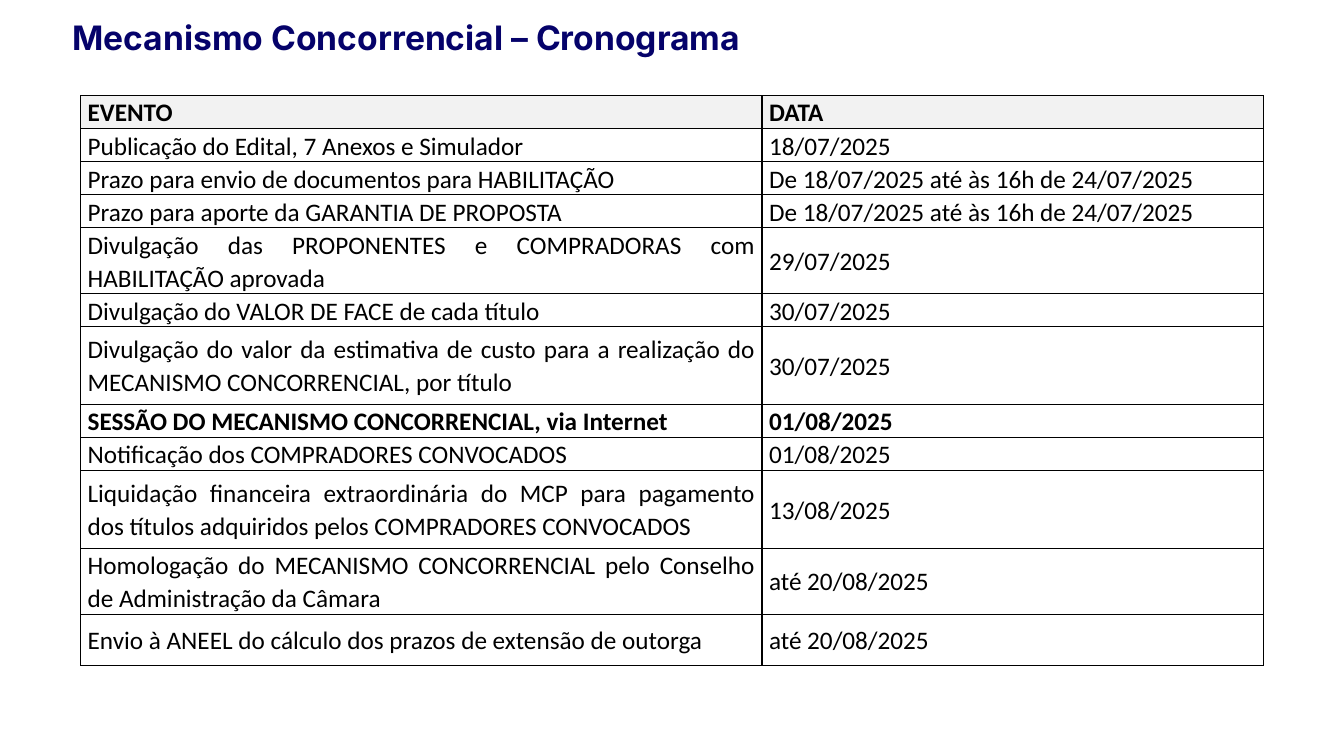
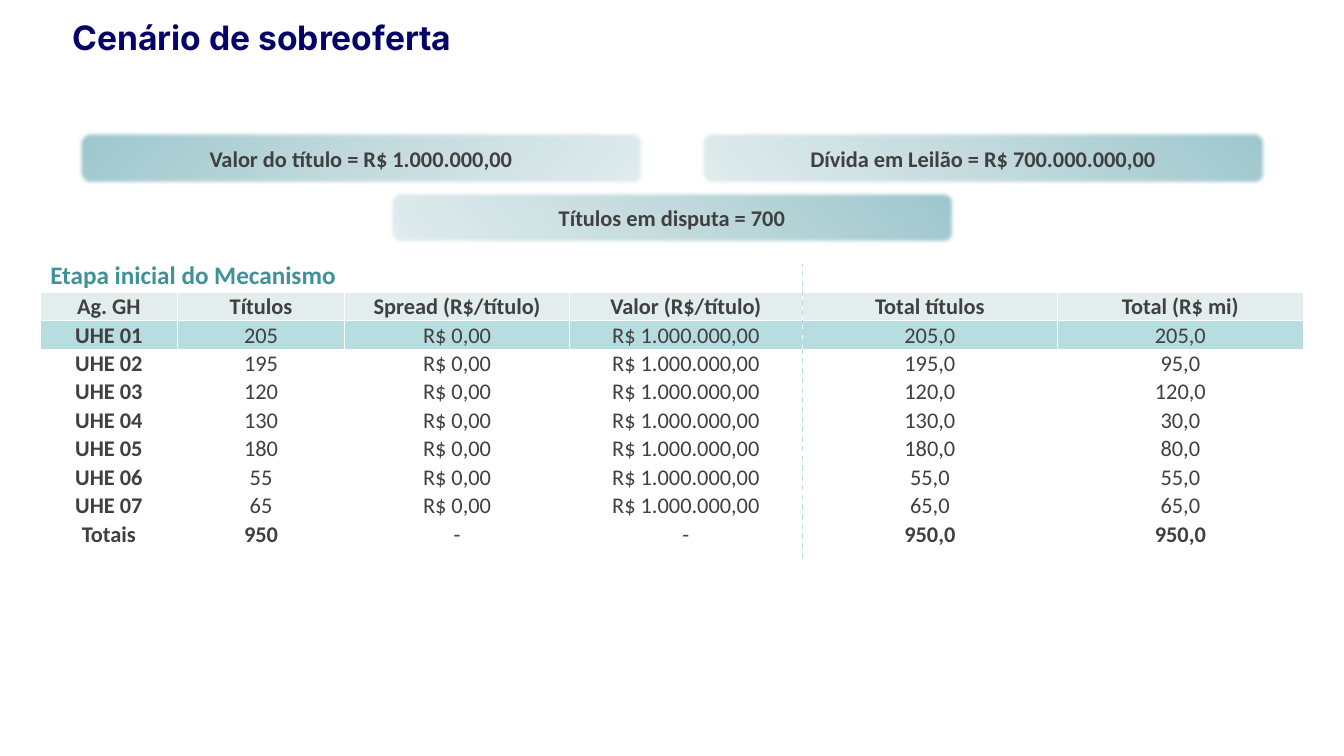
from lxml import etree
from pptx import Presentation, util as u
from pptx.dml.color import RGBColor
from pptx.enum import dml, shapes, text
from pptx.oxml import parse_xml
from pptx.oxml.ns import nsdecls, qn

NAVY = RGBColor(0x05, 0x02, 0x6A)
BLACK = RGBColor(0, 0, 0)
WHITE = RGBColor(0xFF, 0xFF, 0xFF)
GREY = RGBColor(0x40, 0x40, 0x40)
PALE_GREY = RGBColor(0xF2, 0xF2, 0xF2)
TEAL = RGBColor(0x41, 0x91, 0x99)
AQUA = RGBColor(0xB8, 0xDD, 0xE1)
PALE_AQUA = RGBColor(0xE3, 0xED, 0xED)
GRADIENT = [(0, RGBColor(0x9C, 0xC7, 0xCD)), (50, RGBColor(0xC3, 0xDB, 0xDE)),
            (100, RGBColor(0xE2, 0xED, 0xEE))]

CENTER, JUSTIFY = text.PP_ALIGN.CENTER, text.PP_ALIGN.JUSTIFY
TOP, MIDDLE = text.MSO_ANCHOR.TOP, text.MSO_ANCHOR.MIDDLE

SCHEDULE = [
    ("EVENTO", "DATA"),
    ("Publicação do Edital, 7 Anexos e Simulador", "18/07/2025"),
    ("Prazo para envio de documentos para HABILITAÇÃO",
     "De 18/07/2025 até às 16h de 24/07/2025"),
    ("Prazo para aporte da GARANTIA DE PROPOSTA",
     "De 18/07/2025 até às 16h de 24/07/2025"),
    ("Divulgação das PROPONENTES e COMPRADORAS com HABILITAÇÃO aprovada",
     "29/07/2025"),
    ("Divulgação do VALOR DE FACE de cada título", "30/07/2025"),
    ("Divulgação do valor da estimativa de custo para a realização do "
     "MECANISMO CONCORRENCIAL, por título", "30/07/2025"),
    ("SESSÃO DO MECANISMO CONCORRENCIAL, via Internet", "01/08/2025"),
    ("Notificação dos COMPRADORES CONVOCADOS", "01/08/2025"),
    ("Liquidação financeira extraordinária do MCP para pagamento dos títulos "
     "adquiridos pelos COMPRADORES CONVOCADOS", "13/08/2025"),
    ("Homologação do MECANISMO CONCORRENCIAL pelo Conselho de Administração "
     "da Câmara", "até 20/08/2025"),
    ("Envio à ANEEL do cálculo dos prazos de extensão de outorga",
     "até 20/08/2025"),
]
SESSION_ROW = 7

OFFERS = [(205, "205,0"), (195, "95,0"), (120, "120,0"), (130, "30,0"),
          (180, "80,0"), (55, "55,0"), (65, "65,0")]


class Deck:
    """Holds the style and current slide; lengths are percentages of the slide."""

    def __init__(self):
        self.prs = Presentation()
        self.prs.slide_width, self.prs.slide_height = u.Inches(13.33), u.Inches(7.5)
        self.slide = None

    def x(self, share):
        return u.Emu(round(self.prs.slide_width * share / 100))

    def y(self, share):
        return u.Emu(round(self.prs.slide_height * share / 100))

    def box(self, left, top, width, height):
        return self.x(left), self.y(top), self.x(width), self.y(height)

    def add_text(self, tf, words, size, color, bold=True, font="Calibri", align=None):
        p = tf.paragraphs[0]
        p.alignment = align
        r = p.add_run()
        r.text = words
        r.font.name, r.font.size, r.font.bold = font, u.Pt(size), bold
        r.font.color.rgb = color
        return p

    def new_slide(self, title):
        self.slide = self.prs.slides.add_slide(self.prs.slide_layouts[5])
        sp = self.slide.shapes.title
        sp.left, sp.top, sp.width, sp.height = self.box(5.1, 0.67, 83.33, 9.2)
        tf = sp.text_frame
        tf.word_wrap, tf.vertical_anchor = True, MIDDLE
        tf.margin_left = tf.margin_right = u.Inches(0.04)
        tf.margin_top = tf.margin_bottom = u.Inches(0.04)
        p = self.add_text(tf, title, 24, NAVY, font="Inter", align=text.PP_ALIGN.LEFT)
        p.line_spacing = 0.9

    def table(self, left, top, widths, heights):
        frame = self.slide.shapes.add_table(
            len(heights), len(widths),
            *self.box(left, top, sum(widths), sum(heights)))
        table = frame.table
        table.horz_banding = False
        for column, width in zip(table.columns, widths):
            column.width = self.x(width)
        for row, height in zip(table.rows, heights):
            row.height = self.y(height)
        return table

    def cell(self, cell, words, size, color, bold, align, fill, border, margins,
             anchor=MIDDLE):
        (cell.margin_left, cell.margin_top, cell.margin_right,
         cell.margin_bottom) = [u.Inches(m) for m in margins]
        cell.vertical_anchor = anchor
        if fill is None:
            cell.fill.background()
        else:
            cell.fill.solid()
            cell.fill.fore_color.rgb = fill
        tc_pr = cell._tc.get_or_add_tcPr()
        for i, side in enumerate("LRTB"):
            tc_pr.insert(i, parse_xml(
                f'<a:ln{side} {nsdecls("a")} w="12700"><a:solidFill>'
                f'<a:srgbClr val="{border}"/></a:solidFill></a:ln{side}>'))
        return self.add_text(cell.text_frame, words, size, color, bold, align=align)

    def gradient_box(self, left, top, width, height, words, angle):
        sp = self.slide.shapes.add_shape(
            shapes.MSO_SHAPE.ROUNDED_RECTANGLE, *self.box(left, top, width, height))
        sp.line.fill.background()
        stops = "".join(f'<a:gs pos="{pos * 1000}"><a:srgbClr val="{color}"/></a:gs>'
                        for pos, color in GRADIENT)
        sp_pr = sp._element.spPr
        sp_pr.find(qn("a:prstGeom")).addnext(parse_xml(
            f'<a:gradFill {nsdecls("a")} rotWithShape="1"><a:gsLst>{stops}</a:gsLst>'
            f'<a:lin ang="{angle * 60000}" scaled="1"/></a:gradFill>'))
        sp_pr.append(parse_xml(f'<a:effectLst {nsdecls("a")}>'
                               '<a:softEdge rad="31750"/></a:effectLst>'))
        sp.text_frame.word_wrap = True
        sp.text_frame.vertical_anchor = MIDDLE
        self.add_text(sp.text_frame, words, 16, GREY, align=CENTER)

    def heading(self, left, top, width, height, words):
        sp = self.slide.shapes.add_textbox(*self.box(left, top, width, height))
        sp.text_frame.word_wrap = True
        self.add_text(sp.text_frame, words, 18, TEAL)

    def dashed_line(self, x, top, bottom):
        line = self.slide.shapes.add_connector(
            shapes.MSO_CONNECTOR.STRAIGHT,
            self.x(x), self.y(bottom), self.x(x), self.y(top))
        line.line.color.rgb, line.line.width = AQUA, u.Pt(1)
        line.line.dash_style = dml.MSO_LINE.DASH
        etree.SubElement(line._element.spPr, qn("a:effectLst"))


def schedule_slide(deck):
    deck.new_slide("Mecanismo Concorrencial – Cronograma")
    single, double, tall, last = 4.37, 8.73, 10.27, 6.8
    heights = [single] * 4 + [double, single, tall, single, single, tall, double, last]
    table = deck.table(6, 12.67, [50.7, 37.3], heights)
    for i, row in enumerate(SCHEDULE):
        header = i == 0
        for j, words in enumerate(row):
            p = deck.cell(table.cell(i, j), words, 18, BLACK,
                          header or i == SESSION_ROW, JUSTIFY,
                          PALE_GREY if header else None, BLACK,
                          (0.07, 0, 0.07, 0), TOP if header else MIDDLE)
            p.line_spacing, p.space_after = 1.07, u.Pt(8)


def oversupply_slide(deck):
    deck.new_slide("Cenário de sobreoferta")
    rows = [("Ag. GH", "Títulos", "Spread (R$/título)", "Valor (R$/título)",
             "Total títulos", "Total (R$ mi)")]
    rows += [(f"UHE {n:02}", f"{bonds}", "R$ 0,00", "R$ 1.000.000,00",
              f"{bonds},0", total)
             for n, (bonds, total) in enumerate(OFFERS, 1)]
    rows.append(("Totais", "950", "-", "-", "950,0", "950,0"))

    left, widths = 3, [10.2, 12.45, 16.72, 17.33, 18.98, 18.3]
    table = deck.table(left, 38.67, widths, [3.75] * len(rows))
    fills = {0: PALE_AQUA, 1: AQUA}
    for i, row in enumerate(rows):
        for j, words in enumerate(row):
            bold = j == 0 or i == 0 or (i == len(rows) - 1 and words != "-")
            deck.cell(table.cell(i, j), words, 16, GREY, bold, CENTER,
                      fills.get(i), WHITE, (0.01, 0.01, 0.01, 0))

    margin, width, height, top = 5.86, 42, 6.93, 17.47
    deck.gradient_box(margin, top, width, height,
                      "Valor do título = R$ 1.000.000,00", 45)
    deck.gradient_box(100 - margin - width, top, width, height,
                      "Dívida em Leilão = R$ 700.000.000,00", 135)
    deck.heading(left, 33.6, 50, 5.33, "Etapa inicial do Mecanismo")
    deck.dashed_line(left + sum(widths[:4]), 34.93, 73.87)
    deck.gradient_box((100 - width) / 2, 25.33, width, height,
                      "Títulos em disputa = 700", 135)


def main():
    deck = Deck()
    schedule_slide(deck)
    oversupply_slide(deck)
    deck.prs.save("out.pptx")


if __name__ == "__main__":
    main()
